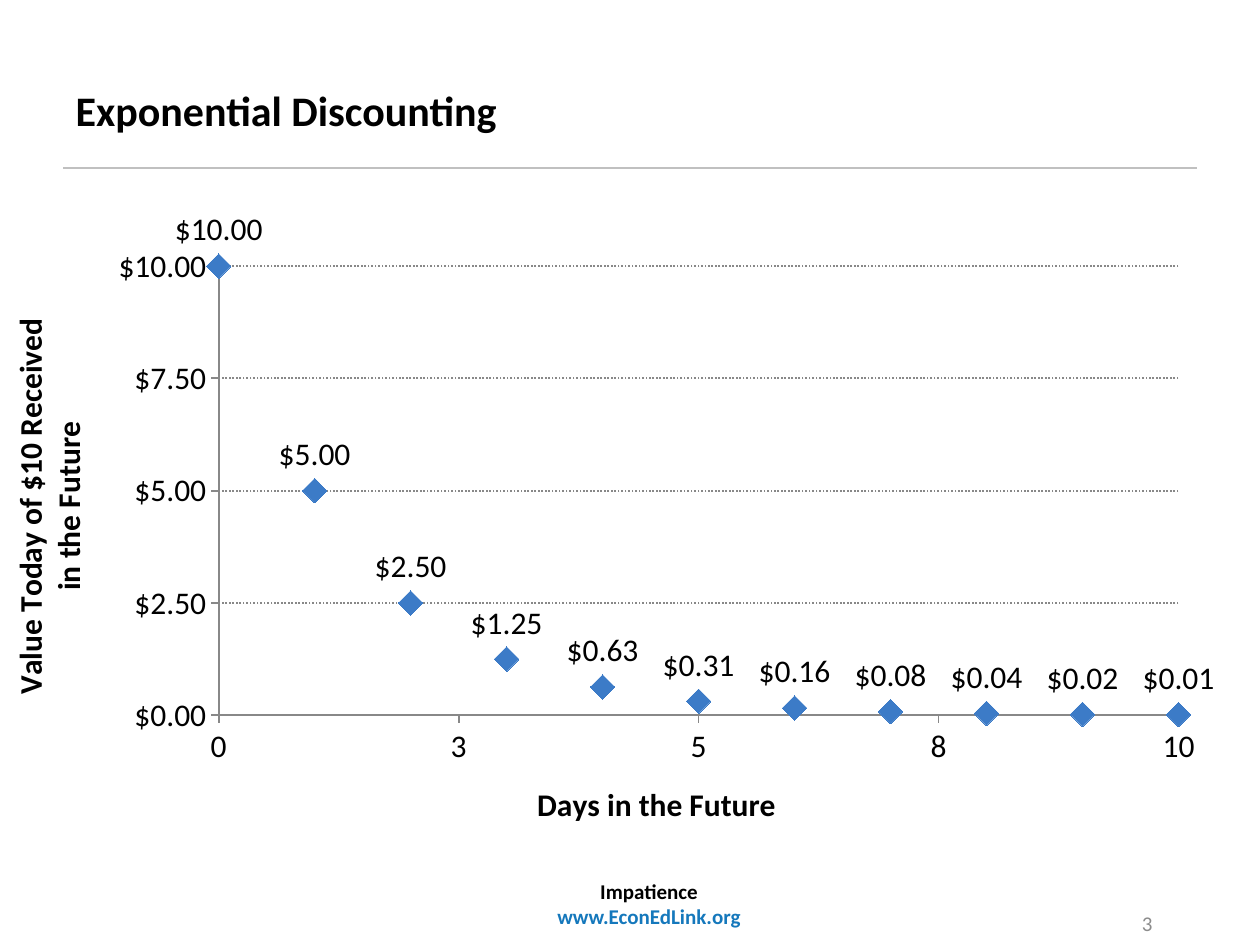
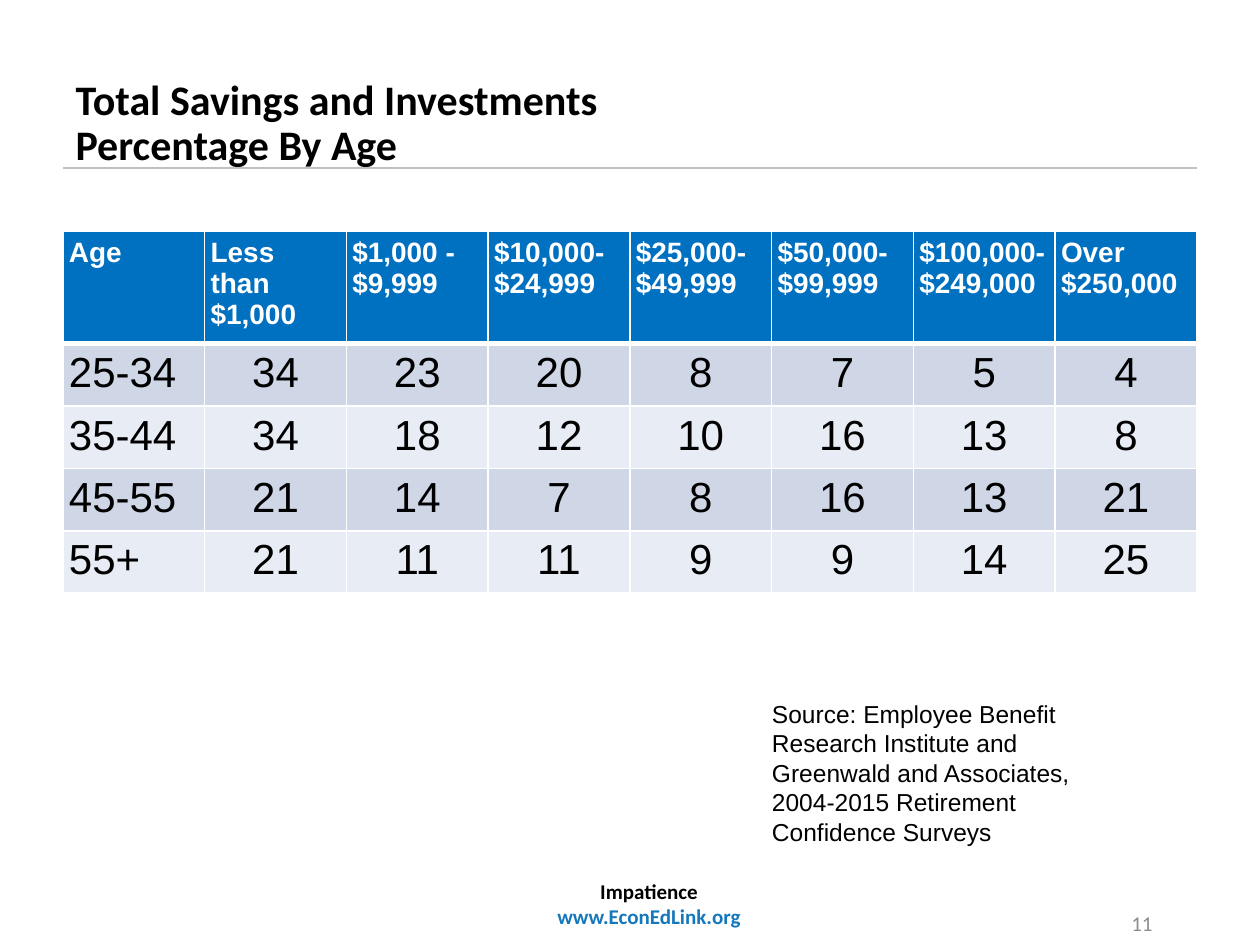
import pptx
import pptx.chart.data
import pptx.chart.datalabel
import pptx.dml.color
import pptx.enum.chart
import pptx.enum.dml
import pptx.enum.shapes
import pptx.enum.text
import pptx.oxml
import pptx.oxml.ns
import pptx.util

RGB = pptx.dml.color.RGBColor
ALIGN = pptx.enum.text.PP_ALIGN
ANCHOR = pptx.enum.text.MSO_ANCHOR

BLACK = RGB(0x00, 0x00, 0x00)
WHITE = RGB(0xFF, 0xFF, 0xFF)
RULE_GRAY = RGB(0xC0, 0xC0, 0xC0)
NUMBER_GRAY = RGB(0x8C, 0x8C, 0x8C)
AXIS_GRAY = RGB(0x88, 0x88, 0x88)
LINK_BLUE = RGB(0x15, 0x78, 0xBC)
MARKER_BLUE = RGB(0x3C, 0x7B, 0xC7)
HEADER_BLUE = RGB(0x00, 0x70, 0xC0)
BANDS = [RGB(0xCF, 0xD7, 0xE7), RGB(0xE8, 0xEC, 0xF4)]

HEADING, BODY = "Calibri", "Arial"
DOLLARS = '"$"#,##0.00'
PX_PER_INCH = 126
CELL_INSET = 6

DAY_VALUES = [10, 5, 2.5, 1.25, 0.63, 0.31, 0.16, 0.08, 0.04, 0.02, 0.01]
SAVINGS = [
    ["Age", "Less than $1,000", "$1,000 - $9,999", "$10,000-$24,999", "$25,000-$49,999",
     "$50,000-$99,999", "$100,000-$249,000", "Over $250,000"],
    ["25-34", 34, 23, 20, 8, 7, 5, 4],
    ["35-44", 34, 18, 12, 10, 16, 13, 8],
    ["45-55", 21, 14, 7, 8, 16, 13, 21],
    ["55+", 21, 11, 11, 9, 9, 14, 25],
]


def px(n):
    return round(n * 914400 / PX_PER_INCH)


def emu(box):
    return [px(n) for n in box]


def set_attrs(obj, **values):
    for name, value in values.items():
        setattr(obj, name, value)


def style(font, size, color=BLACK, name=HEADING, bold=False):
    set_attrs(font, size=pptx.util.Pt(size), name=name, bold=bold)
    font.color.rgb = color


def style_line(line, color, width):
    line.color.rgb = color
    line.width = pptx.util.Pt(width)


def set_insets(obj, inset):
    for side in ("left", "top", "right", "bottom"):
        setattr(obj, f"margin_{side}", px(inset))


def add_text(s, box, lines, align=ALIGN.LEFT, anchor=ANCHOR.TOP):
    """Add a text box; each line is its text and a dict of font values."""
    tf = s.shapes.add_textbox(*emu(box)).text_frame
    set_attrs(tf, word_wrap=True, vertical_anchor=anchor)
    tf.text = "\n".join(text for text, _ in lines)
    for p, (_, look) in zip(tf.paragraphs, lines):
        p.alignment = align
        style(p.runs[0].font, **look)
    return tf


def add_base_slide(prs, title, title_top, number):
    """Add a slide with title, rule, footer and slide number."""
    s = prs.slides.add_slide(prs.slide_layouts[5])
    sp = s.shapes.title
    sp.left, sp.top, sp.width, sp.height = emu((63, title_top, 1134, 84))
    tf = sp.text_frame
    tf.text = title
    set_attrs(tf, vertical_anchor=ANCHOR.TOP, word_wrap=True,
              auto_size=pptx.enum.text.MSO_AUTO_SIZE.NONE)
    p = tf.paragraphs[0]
    set_attrs(p, alignment=ALIGN.LEFT, line_spacing=0.9)
    for r in p.runs:
        style(r.font, 24, bold=True)

    rule = s.shapes.add_connector(pptx.enum.shapes.MSO_CONNECTOR.STRAIGHT,
                                  *emu((63, 168, 1197, 168)))
    style_line(rule.line, RULE_GRAY, 1.25)
    rule.element.spPr.append(
        pptx.oxml.parse_xml(f"<a:effectLst {pptx.oxml.ns.nsdecls('a')}/>"))

    add_text(s, (105, 872, 1088, 63),
             [("Impatience", dict(size=12, bold=True)),
              ("www.EconEdLink.org", dict(size=12, bold=True, color=LINK_BLUE))],
             ALIGN.CENTER, ANCHOR.MIDDLE)
    add_text(s, (903, 892, 262, 63), [(str(number), dict(size=12, color=NUMBER_GRAY))],
             ALIGN.RIGHT, ANCHOR.MIDDLE)
    return s


def format_axis(axis, title, number_format):
    set_attrs(axis, minimum_scale=0, maximum_scale=10, major_unit=2.5,
              major_tick_mark=pptx.enum.chart.XL_TICK_MARK.OUTSIDE,
              minor_tick_mark=pptx.enum.chart.XL_TICK_MARK.NONE)
    set_attrs(axis.tick_labels, number_format=number_format, number_format_is_linked=False)
    style(axis.tick_labels.font, 18)
    style_line(axis.format.line, AXIS_GRAY, 1)
    tf = axis.axis_title.text_frame
    tf.text = title
    for p in tf.paragraphs:
        style(p.font, 18, bold=True)
        style(p.runs[0].font, 18, bold=True)


def set_plot_layout(chart, **fractions):
    """Fix the inner plot area as fractions x, y, w, h of the chart."""
    plot_area = chart.element.xpath(".//c:plotArea")[0]
    for layout in plot_area.xpath("c:layout"):
        plot_area.remove(layout)
    sizes = "".join(f'<c:{k} val="{v}"/>' for k, v in fractions.items())
    plot_area.insert(0, pptx.oxml.parse_xml(
        f"<c:layout {pptx.oxml.ns.nsdecls('c')}><c:manualLayout>"
        '<c:layoutTarget val="inner"/><c:xMode val="edge"/><c:yMode val="edge"/>'
        f"{sizes}</c:manualLayout></c:layout>"))


def add_discount_chart(s, box):
    data = pptx.chart.data.XyChartData(number_format=DOLLARS)
    series = data.add_series("Series 1")
    for day, value in enumerate(DAY_VALUES):
        series.add_data_point(day, value)
    chart = s.shapes.add_chart(pptx.enum.chart.XL_CHART_TYPE.XY_SCATTER,
                               *emu(box), data).chart
    set_attrs(chart, has_legend=False, has_title=False)
    style(chart.font, 18)
    set_plot_layout(chart, x=0.18, y=0.09, w=0.79, h=0.72)

    format_axis(chart.category_axis, "Days in the Future", "0")
    chart.category_axis.has_major_gridlines = False
    axis = chart.value_axis
    format_axis(axis, "Value Today of $10 Received\nin the Future", DOLLARS)
    body = axis.axis_title.element.xpath(".//a:bodyPr")[0]
    body.set("rot", "-5400000")
    body.set("vert", "horz")
    grid = axis.major_gridlines.format.line
    style_line(grid, AXIS_GRAY, 1)
    grid.dash_style = pptx.enum.dml.MSO_LINE.ROUND_DOT

    plot = chart.plots[0]
    plot.vary_by_categories = False
    points = plot.series[0]
    points.format.line.fill.background()
    marker = points.marker
    set_attrs(marker, style=pptx.enum.chart.XL_MARKER_STYLE.DIAMOND, size=14)
    marker.format.fill.solid()
    marker.format.fill.fore_color.rgb = MARKER_BLUE
    marker.format.line.fill.background()

    dollar_labels = pptx.chart.datalabel.DataLabels(
        chart.element.xpath(".//c:ser")[0].get_or_add_dLbls())
    set_attrs(dollar_labels, show_value=True, number_format=DOLLARS,
              number_format_is_linked=False,
              position=pptx.enum.chart.XL_LABEL_POSITION.ABOVE)
    style(dollar_labels.font, 18)


def add_cell_borders(frame, columns):
    """White borders, thicker between the header and the first row."""
    for i, tc_pr in enumerate(frame.element.xpath(".//a:tcPr")):
        row = i // columns
        thick = {0: "B", 1: "T"}.get(row)
        for at, side in enumerate("LRTB"):
            width = pptx.util.Pt(3 if side == thick else 1)
            tc_pr.insert(at, pptx.oxml.parse_xml(
                f"<a:ln{side} {pptx.oxml.ns.nsdecls('a')} w=\"{width}\"><a:solidFill>"
                f'<a:srgbClr val="{WHITE}"/></a:solidFill></a:ln{side}>'))


def add_savings_table(s, box):
    columns = len(SAVINGS[0])
    frame = s.shapes.add_table(len(SAVINGS), columns, *emu(box))
    for i, row in enumerate(SAVINGS):
        for j, value in enumerate(row):
            cell = frame.table.cell(i, j)
            cell.text = str(value)
            set_insets(cell, CELL_INSET)
            cell.fill.solid()
            cell.fill.fore_color.rgb = BANDS[(i - 1) % 2] if i else HEADER_BLUE
            p = cell.text_frame.paragraphs[0]
            p.alignment = ALIGN.CENTER if i and j else ALIGN.LEFT
            if i:
                style(p.runs[0].font, 24, BLACK, BODY)
            else:
                style(p.runs[0].font, 16, WHITE, BODY, True)
    add_cell_borders(frame, columns)


def add_source_note(s, box):
    tf = add_text(s, box, [("Source: Employee Benefit Research Institute and Greenwald and "
                            "Associates, 2004-2015 Retirement Confidence Surveys",
                            dict(size=14, name=BODY))])
    set_insets(tf, CELL_INSET)
    tf.auto_size = pptx.enum.text.MSO_AUTO_SIZE.SHAPE_TO_FIT_TEXT


def main():
    prs = pptx.Presentation()
    prs.slide_width, prs.slide_height = px(1260), px(945)

    s = add_base_slide(prs, "Exponential Discounting", 84, 3)
    add_discount_chart(s, (0, 210, 1215, 624))

    s = add_base_slide(prs, "Total Savings and Investments\vPercentage By Age", 73, 11)
    add_savings_table(s, (63, 231, 1134, 260))
    add_source_note(s, (766, 693, 378, 152))

    prs.save("out.pptx")


if __name__ == "__main__":
    main()
